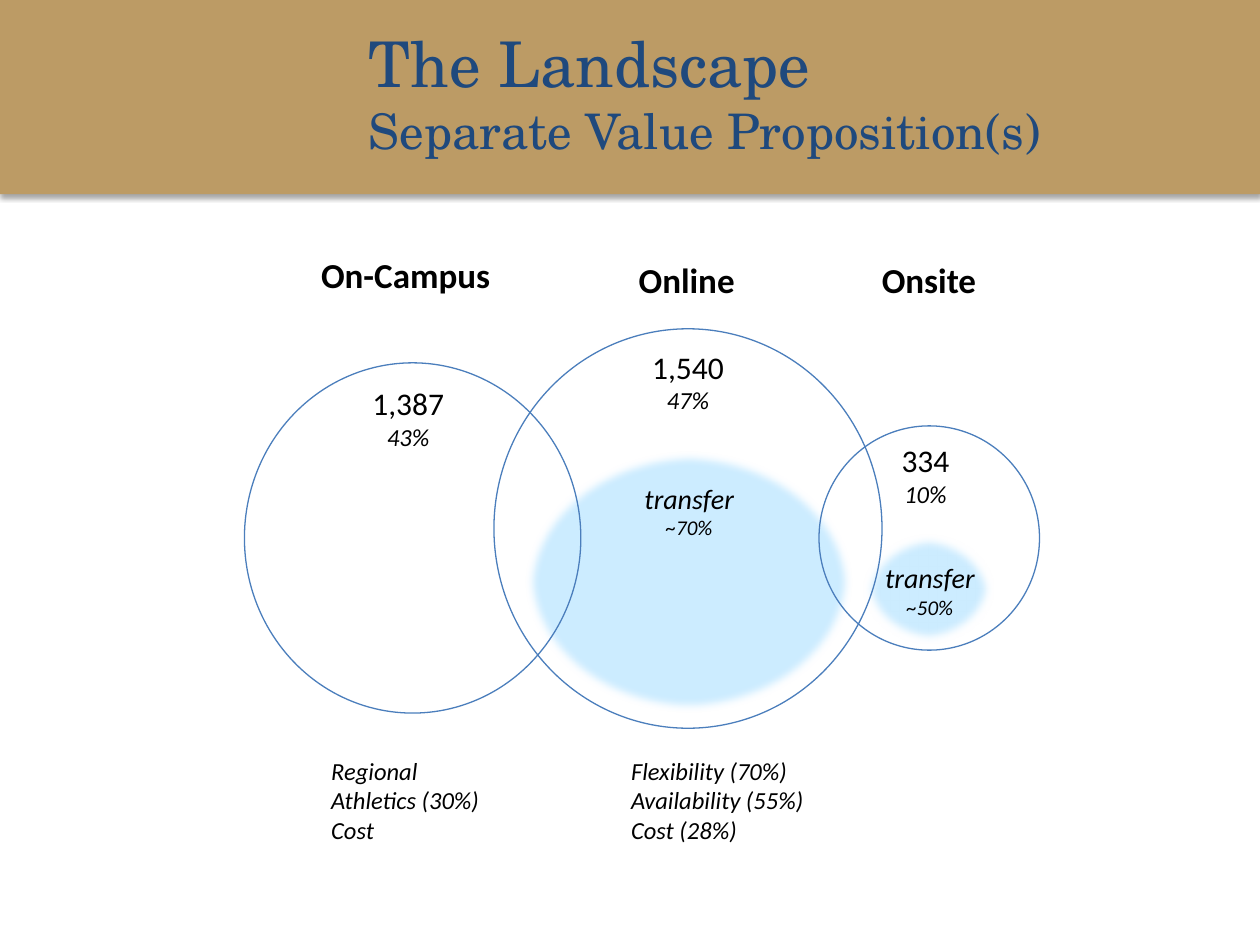
from lxml import etree
from pptx import Presentation
from pptx.dml.color import RGBColor
from pptx.enum.shapes import MSO_SHAPE
from pptx.enum.text import MSO_ANCHOR, MSO_AUTO_SIZE, PP_ALIGN
from pptx.oxml.ns import qn
from pptx.util import Inches, Pt

RECTANGLE, OVAL = MSO_SHAPE.RECTANGLE, MSO_SHAPE.OVAL
LEFT, CENTER = PP_ALIGN.LEFT, PP_ALIGN.CENTER
MIDDLE = MSO_ANCHOR.MIDDLE
FIT_SHAPE = MSO_AUTO_SIZE.SHAPE_TO_FIT_TEXT

BODY_FONT, TITLE_FONT = "Calibri", "TeX Gyre Schola"
GOLD, NAVY, BLUE, PALE_BLUE, BLACK = "BC9B65", "1F497D", "4B7EBC", "CCECFF", "000000"


def color(hex_string):
    return RGBColor.from_string(hex_string)


def add_effect(shape, tag, **attributes):
    effects = shape._element.spPr.find(qn("a:effectLst"))
    return etree.SubElement(effects, qn(tag), attributes)


def add_shape(slide, kind, box, fill=None, line=None):
    shape = slide.shapes.add_shape(kind, *map(Inches, box))
    shape.shadow.inherit = False
    if fill:
        shape.fill.solid()
        shape.fill.fore_color.rgb = color(fill)
    else:
        shape.fill.background()
    if line:
        shape.line.color.rgb = color(line)
        shape.line.width = Pt(0.75)
    else:
        shape.line.fill.background()
    return shape


def add_banner(slide):
    banner = add_shape(slide, RECTANGLE, (0, -0.01, 10, 1.55), fill=GOLD)
    shadow = add_effect(banner, "a:outerShdw", blurRad=str(Pt(3.1)), dist=str(Pt(1.8)),
                        dir="5400000", rotWithShape="0")
    shadow_color = etree.SubElement(shadow, qn("a:srgbClr"), val=BLACK)
    etree.SubElement(shadow_color, qn("a:alpha"), val="35000")


def add_transfer_area(slide, box):
    area = add_shape(slide, OVAL, box, fill=PALE_BLUE, line=BLUE)
    add_effect(area, "a:softEdge", rad=str(Pt(5)))


def add_text(slide, box, lines, font=BODY_FONT, text_color=BLACK, align=LEFT, wrap=False):
    """Each line is (text, size) or (text, size, style), style "b" or "i"."""
    frame = slide.shapes.add_textbox(*map(Inches, box)).text_frame
    frame.word_wrap = wrap
    if not wrap:
        frame.auto_size = FIT_SHAPE
    for index, (text, size, *style) in enumerate(lines):
        paragraph = frame.paragraphs[0] if index == 0 else frame.add_paragraph()
        paragraph.alignment = align
        run = paragraph.add_run()
        run.text = text
        run.font.name = font
        run.font.size = Pt(size)
        run.font.color.rgb = color(text_color)
        run.font.bold = "b" in style
        run.font.italic = "i" in style
    return frame


def main():
    presentation = Presentation()
    presentation.slide_width, presentation.slide_height = Inches(10), Inches(7.5)
    slide = presentation.slides.add_slide(presentation.slide_layouts[6])

    # Banner and title
    add_banner(slide)
    title = add_text(slide, (2.83, 0.16, 6.92, 1.14),
                     [("The Landscape", 36), ("Separate Value Proposition(s)", 28)],
                     font=TITLE_FONT, text_color=NAVY, wrap=True)
    title.vertical_anchor = MIDDLE

    # Soft transfer areas behind the circles
    add_transfer_area(slide, (6.85, 4.24, 1.04, 0.87))
    add_transfer_area(slide, (4.17, 3.58, 2.59, 2.07))

    # Overlapping student groups
    for circle in ((1.94, 2.88, 2.67, 2.78), (6.5, 3.38, 1.75, 1.78), (3.92, 2.61, 3.08, 3.17)):
        add_shape(slide, OVAL, circle, line=BLUE)

    # Group headings
    for heading, left, top, width in (("On-Campus", 2.45, 1.96, 1.56),
                                      ("Online", 4.97, 2, 0.97),
                                      ("Onsite", 6.9, 2, 0.96)):
        add_text(slide, (left, top, width, 0.44), [(heading, 20, "b")])

    # Head counts and shares
    for count, share, left, top, width in (("1,387", "43%", 2.85, 3, 0.78),
                                           ("1,540", "47%", 5.07, 2.71, 0.78),
                                           ("334", "10%", 7.05, 3.45, 0.59)):
        add_text(slide, (left, top, width, 0.64), [(count, 18), (share, 14, "i")], align=CENTER)

    # Transfer shares
    for share, left, top in (("~70%", 5.01, 3.77), ("~50%", 6.92, 4.4)):
        add_text(slide, (left, top, 0.92, 0.57),
                 [("transfer", 16, "i"), (share, 12, "i")], align=CENTER)

    # Reasons for choosing each group
    for left, width, reasons in (
            (2.53, 1.39, ("Regional", "Athletics (30%)", "Cost")),
            (4.91, 1.59, ("Flexibility (70%)", "Availability (55%)", "Cost (28%)"))):
        add_text(slide, (left, 5.95, width, 0.81), [(reason, 14, "i") for reason in reasons])

    presentation.save("out.pptx")


if __name__ == "__main__":
    main()
